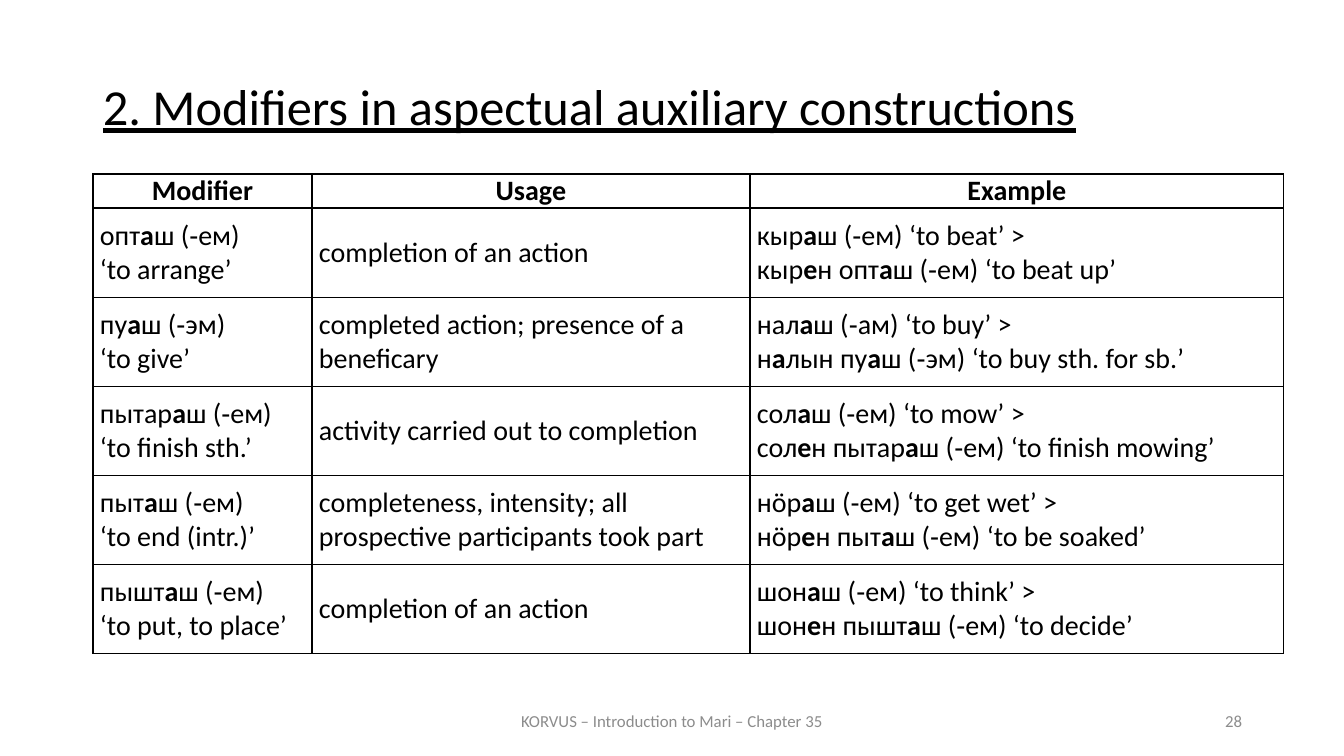
from lxml import etree
from pptx import Presentation, util as u
from pptx.dml import color
from pptx.enum import text
from pptx.oxml import ns

EMU_PER_PX = 12192000 / 1344
FONT = "Calibri"
BLACK = "000000"
GREY = "8C8C8C"
ALIGN = text.PP_ALIGN
ANCHOR = text.MSO_ANCHOR

COLUMN_WIDTHS = [219, 438, 534]
HEADER_HEIGHT = 34
HEADINGS = ["Modifier", "Usage", "Example"]
MODIFIERS = [
    ("опт*а*ш (‑ем)\n‘to arrange’",
     "completion of an action",
     "кыр*а*ш (‑ем) ‘to beat’ >\nкыр*е*н опт*а*ш (‑ем) ‘to beat up’"),
    ("пу*а*ш (‑эм)\n‘to give’",
     "completed action; presence of a beneficary",
     "нал*а*ш (‑ам) ‘to buy’ >\nн*а*лын пу*а*ш (‑эм) ‘to buy sth. for sb.’"),
    ("пытар*а*ш (‑ем)\n‘to finish sth.’",
     "activity carried out to completion",
     "сол*а*ш (‑ем) ‘to mow’ >\nсол*е*н пытар*а*ш (‑ем) ‘to finish mowing’"),
    ("пыт*а*ш (‑ем)\n‘to end (intr.)’",
     "completeness, intensity; all prospective participants took part",
     "нӧр*а*ш (‑ем) ‘to get wet’ >\nнӧр*е*н пыт*а*ш (‑ем) ‘to be soaked’"),
    ("пышт*а*ш (‑ем)\n‘to put, to place’",
     "completion of an action",
     "шон*а*ш (‑ем) ‘to think’ >\nшон*е*н пышт*а*ш (‑ем) ‘to decide’"),
]


def px(length):
    return u.Emu(round(length * EMU_PER_PX))


def rgb(hex_string):
    return color.RGBColor.from_string(hex_string)


def format_run(run, size, hex_string, bold=False, underline=False):
    run.font.name = FONT
    run.font.size = u.Pt(size)
    run.font.color.rgb = rgb(hex_string)
    run.font.bold = bold
    run.font.underline = underline


def add_label(slide, box, words, size, hex_string, align, anchor, underline=False):
    shape = slide.shapes.add_textbox(*map(px, box))
    frame = shape.text_frame
    frame.word_wrap = True
    frame.vertical_anchor = anchor
    frame.text = words
    paragraph = frame.paragraphs[0]
    paragraph.alignment = align
    format_run(paragraph.runs[0], size, hex_string, underline=underline)
    return paragraph


def add_title(slide, box):
    paragraph = add_label(slide, box, "2. Modifiers in aspectual auxiliary constructions",
                          36, BLACK, ALIGN.JUSTIFY, ANCHOR.TOP, underline=True)
    paragraph.line_spacing = 0.9
    paragraph.space_before = u.Pt(12)


def add_borders(cell):
    properties = cell._tc.get_or_add_tcPr()
    for index, side in enumerate(["lnL", "lnR", "lnT", "lnB"]):
        line = etree.Element(ns.qn(f"a:{side}"), w=str(u.Pt(1)))
        fill = etree.SubElement(line, ns.qn("a:solidFill"))
        etree.SubElement(fill, ns.qn("a:srgbClr"), val=BLACK)
        properties.insert(index, line)


def fill_cell(cell, marked_text, align, anchor):
    cell.fill.background()
    cell.margin_left = cell.margin_right = px(7)
    cell.margin_top = cell.margin_bottom = 0
    cell.vertical_anchor = anchor
    add_borders(cell)
    frame = cell.text_frame
    lines = marked_text.split("\n")
    frame.text = "\n".join([""] * len(lines))
    for paragraph, line in zip(frame.paragraphs, lines):
        paragraph.alignment = align
        for index, part in enumerate(line.split("*")):
            if part:
                run = paragraph.add_run()
                run.text = part
                format_run(run, 20, BLACK, bold=index % 2 == 1)


def add_modifier_table(slide, box):
    height = box[3]
    frame = slide.shapes.add_table(len(MODIFIERS) + 1, len(HEADINGS), *map(px, box))
    table = frame.table
    table.first_row = table.horz_banding = False
    for column, width in zip(table.columns, COLUMN_WIDTHS):
        column.width = px(width)
    for row in table.rows:
        row.height = px((height - HEADER_HEIGHT) / len(MODIFIERS))
    table.rows[0].height = px(HEADER_HEIGHT)
    for index, heading in enumerate(HEADINGS):
        fill_cell(table.cell(0, index), f"*{heading}*", ALIGN.CENTER, ANCHOR.TOP)
    alignments = [ALIGN.JUSTIFY, ALIGN.LEFT, ALIGN.LEFT]
    for row_index, entries in enumerate(MODIFIERS, 1):
        for index, (entry, align) in enumerate(zip(entries, alignments)):
            fill_cell(table.cell(row_index, index), entry, align, ANCHOR.MIDDLE)


def add_footer(slide, box):
    left, top, width, height = box
    label_width, number_width = 454, 302
    label_left = left + (width - label_width) // 2
    number_left = left + width - number_width
    add_label(slide, (label_left, top, label_width, height),
              "KORVUS – Introduction to Mari – Chapter 35",
              12, GREY, ALIGN.CENTER, ANCHOR.MIDDLE)
    add_label(slide, (number_left, top, number_width, height),
              "28", 12, GREY, ALIGN.RIGHT, ANCHOR.MIDDLE)


def main():
    presentation = Presentation()
    presentation.slide_width = px(1344)
    presentation.slide_height = px(756)
    slide = presentation.slides.add_slide(presentation.slide_layouts[6])
    add_title(slide, (93, 77, 1159, 84))
    add_footer(slide, (93, 701, 1159, 40))
    add_modifier_table(slide, (93, 174, sum(COLUMN_WIDTHS), 480))
    presentation.save("out.pptx")


if __name__ == "__main__":
    main()
